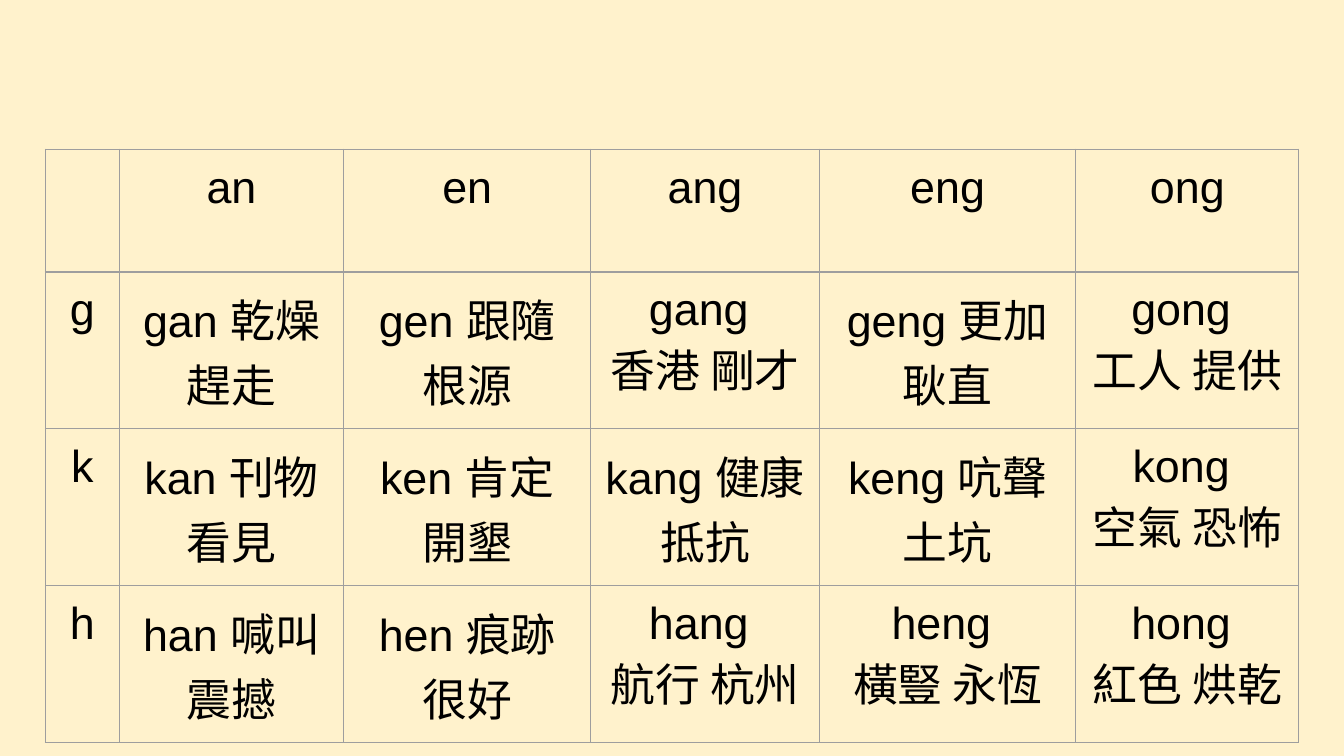
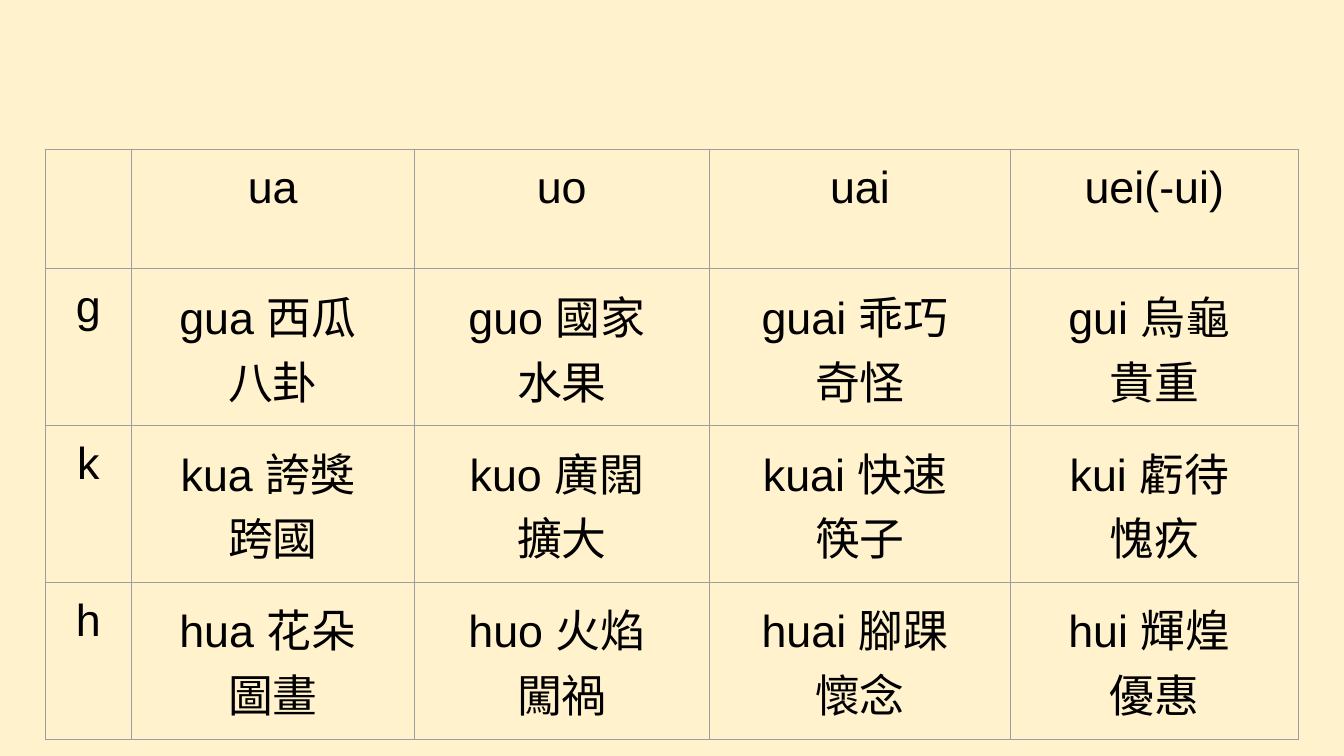
from dataclasses import dataclass
from lxml.etree import SubElement
from pptx import Presentation
from pptx.dml.color import RGBColor
from pptx.enum.text import PP_ALIGN
from pptx.oxml.ns import qn
from pptx.util import Pt


@dataclass(frozen=True)
class Theme:
    back: str = "FFF2CC"
    ink: str = "000000"
    line: str = "9E9E9E"
    font: str = "Arial"
    size: float = 24
    rule: float = 0.75
    pad: float = 7.2
    left: float = 24.3
    top: float = 80
    body: float = 84


THEME = Theme()

NASALS = [
    ["", "an", "en", "ang", "eng", "ong"],
    ["g", "gan 乾燥 趕走", "gen 跟隨 根源", "gang \n香港 剛才",
     "geng 更加 耿直", "gong \n工人 提供"],
    ["k", "kan 刊物 看見", "ken 肯定 開墾", "kang 健康 抵抗",
     "keng 吭聲\n土坑", "kong \n空氣 恐怖 "],
    ["h", "han 喊叫 震撼", "hen 痕跡 很好", "hang \n航行 杭州",
     "heng \n橫豎 永恆", "hong \n紅色 烘乾"],
]

GLIDES = [
    ["", "ua", "uo", "uai", "uei(-ui)"],
    ["g", "gua 西瓜 \n八卦", "guo 國家 \n水果", "guai 乖巧 \n奇怪", "gui 烏龜 \n貴重"],
    ["k", "kua 誇獎 \n跨國", "kuo 廣闊 \n擴大", "kuai 快速 \n筷子", "kui 虧待 \n愧疚"],
    ["h", "hua 花朵 \n圖畫", "huo 火焰 \n闖禍", "huai 腳踝 \n懷念", "hui 輝煌 \n優惠"],
]


def add_page(deck):
    page = deck.slides.add_slide(deck.slide_layouts[6])
    fill = page.background.fill
    fill.solid()
    fill.fore_color.rgb = RGBColor.from_string(THEME.back)
    return page


def add_run(para, text):
    run = para.add_run()
    run.text = text
    font = run.font
    font.size = Pt(THEME.size)
    font.color.rgb = RGBColor.from_string(THEME.ink)
    font.name = THEME.font


def add_edges(cell):
    props = cell._tc.get_or_add_tcPr()
    for side in ("lnL", "lnR", "lnT", "lnB"):
        edge = SubElement(props, qn(f"a:{side}"), w=str(Pt(THEME.rule)))
        paint = SubElement(edge, qn("a:solidFill"))
        SubElement(paint, qn("a:srgbClr"), val=THEME.line)


def fill_cell(cell, text):
    add_edges(cell)
    cell.fill.background()
    cell.margin_left = cell.margin_right = Pt(THEME.pad)
    cell.margin_top = cell.margin_bottom = Pt(THEME.pad)
    if not text:
        return
    frame = cell.text_frame
    for i, line in enumerate(text.split("\n")):
        para = frame.add_paragraph() if i else frame.paragraphs[0]
        para.alignment = PP_ALIGN.CENTER
        add_run(para, line)


def add_grid(page, words, widths, head):
    highs = [head] + [THEME.body] * (len(words) - 1)
    table = page.shapes.add_table(
        len(words), len(widths), Pt(THEME.left), Pt(THEME.top),
        Pt(sum(widths)), Pt(sum(highs))).table
    table.first_row = table.horz_banding = False
    for col, width in zip(table.columns, widths):
        col.width = Pt(width)
    for row, high, texts in zip(table.rows, highs, words):
        row.height = Pt(high)
        for cell, text in zip(row.cells, texts):
            fill_cell(cell, text)


def main():
    deck = Presentation()
    deck.slide_width, deck.slide_height = Pt(720), Pt(405)
    add_grid(add_page(deck), NASALS, [39.6, 120.2, 132.4, 122.5, 137.4, 119.5], 65.7)
    add_grid(add_page(deck), GLIDES, [46.1, 151.5, 158.2, 161.3, 154.1], 64)
    deck.save("out.pptx")


if __name__ == "__main__":
    main()
